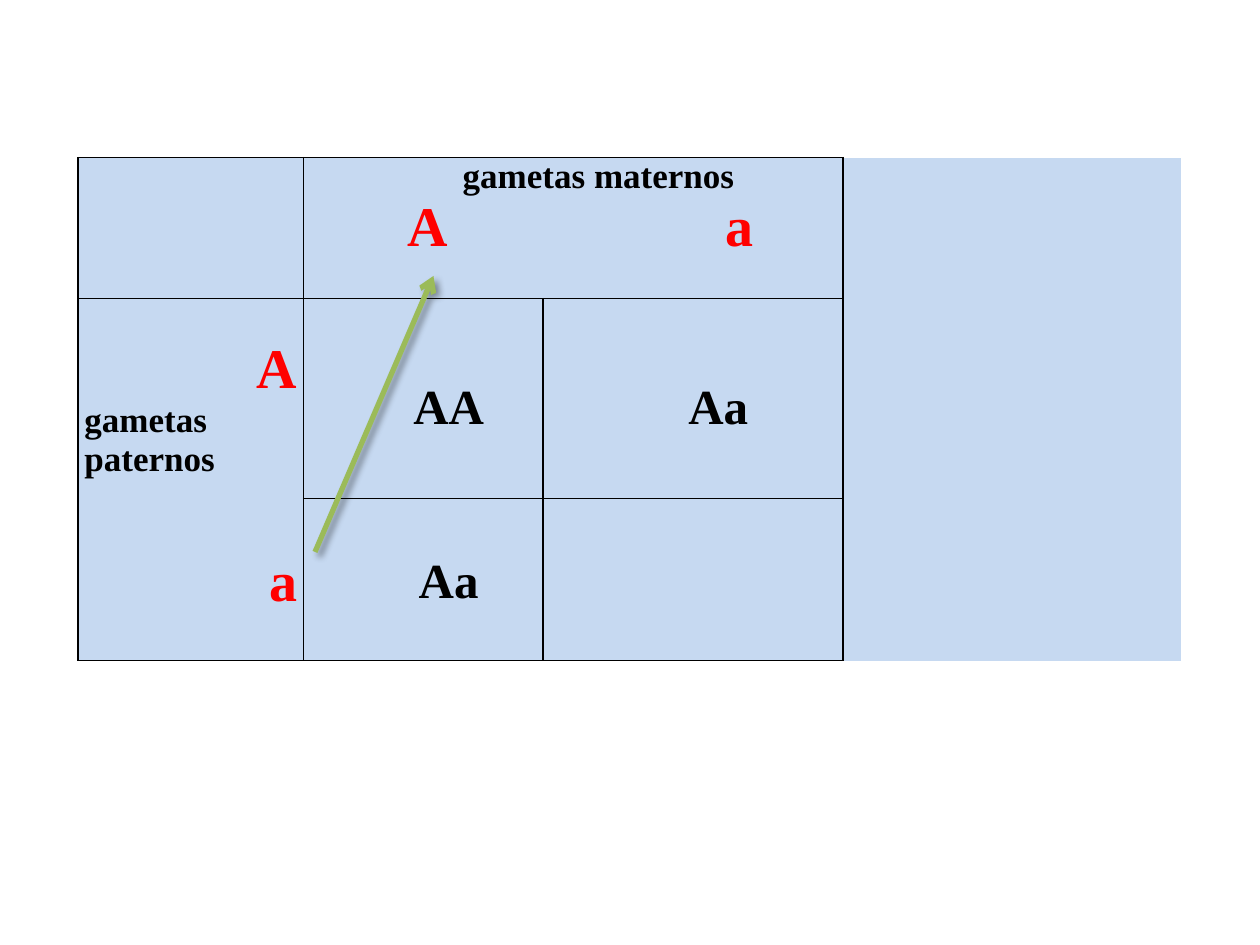
from lxml.etree import SubElement
from pptx import Presentation
from pptx.dml.color import RGBColor
from pptx.enum.shapes import MSO_CONNECTOR
from pptx.enum.text import PP_ALIGN
from pptx.oxml.ns import qn
from pptx.util import Pt

THEME = {
    "font": "Times New Roman",
    "ink": "000000", "allele": "FF0000", "cell": "C6D9F1", "arrow": "9BBB59",
    "label": 20, "genotype": 28, "gamete": 32,
    "border": 1, "arrow_width": 3,
}
LEFT, TOP = 44.64, 90
COLUMNS = [128.9, 136.8, 171.4, 193]
ROWS = [80.6, 114.3, 92.6]
MERGES = [((0, 1), (0, 2)), ((1, 0), (2, 0)), ((0, 3), (2, 3))]
ARROW = (180, 315.4, 247.7, 157.7)
INDENT = 28.8
GAMETE_TABS = [55.8, 237.6]

# (row, column): top margin and paragraphs of (text, size, colour, format)
CENTRED = {"alignment": PP_ALIGN.CENTER}
RIGHT = {"alignment": PP_ALIGN.RIGHT}
CONTENT = {
    (0, 1): (0, [("gametas maternos", "label", "ink", CENTRED),
                 ("\tA\ta", "gamete", "allele", {})]),
    (1, 0): (23, [("A", "gamete", "allele", RIGHT),
                  ("gametas paternos", "label", "ink", {"alignment": PP_ALIGN.LEFT}),
                  ("a", "gamete", "allele", {**RIGHT, "space_before": Pt(41.7)})]),
    (1, 1): (47, [("AA", "genotype", "ink", CENTRED)]),
    (1, 2): (47, [("Aa", "genotype", "ink", CENTRED)]),
    (2, 1): (32.2, [("Aa", "genotype", "ink", CENTRED)]),
}


def colour(name):
    return RGBColor.from_string(THEME[name])


def apply(target, values):
    for name, value in values.items():
        setattr(target, name, value)


def add_element(parent, tag, **attributes):
    element = SubElement(parent, qn(tag))
    for name, value in attributes.items():
        element.set(name, str(value))
    return element


def style_cell(cell, visible_sides):
    properties = cell._tc.get_or_add_tcPr()
    for side in "LRTB":
        line = add_element(properties, f"a:ln{side}", w=Pt(THEME["border"]))
        if side in visible_sides:
            fill = add_element(line, "a:solidFill")
            add_element(fill, "a:srgbClr", val=THEME["ink"])
        else:
            add_element(line, "a:noFill")
    cell.fill.solid()
    cell.fill.fore_color.rgb = colour("cell")


def write_cell(cell, top_margin, lines):
    apply(cell, {"margin_left": Pt(3.6), "margin_right": Pt(3.6),
                 "margin_top": Pt(top_margin), "margin_bottom": 0})
    frame = cell.text_frame
    for index, (text, size, ink, values) in enumerate(lines):
        para = frame.add_paragraph() if index else frame.paragraphs[0]
        apply(para, values)
        properties = para._p.get_or_add_pPr()
        if values is CENTRED:
            properties.set("indent", str(Pt(INDENT)))
        if "\t" in text:
            tabs = add_element(properties, "a:tabLst")
            for position in GAMETE_TABS:
                add_element(tabs, "a:tab", pos=Pt(position), algn="l")
        span = para.add_run()
        span.text = text
        apply(span.font, {"name": THEME["font"], "size": Pt(THEME[size]), "bold": True})
        span.font.color.rgb = colour(ink)


def add_punnett_table(page):
    frame = page.shapes.add_table(len(ROWS), len(COLUMNS), Pt(LEFT), Pt(TOP),
                                  Pt(sum(COLUMNS)), Pt(sum(ROWS)))
    table = frame.table
    apply(table, {"first_row": False, "horz_banding": False})
    for column, width in zip(table.columns, COLUMNS):
        column.width = Pt(width)
    for row, height in zip(table.rows, ROWS):
        row.height = Pt(height)
    for start, end in MERGES:
        table.cell(*start).merge(table.cell(*end))
    last = len(COLUMNS) - 1
    for row in range(len(ROWS)):
        for column in range(len(COLUMNS)):
            style_cell(table.cell(row, column), "L" if column == last else "LRTB")
    for place, (top_margin, lines) in CONTENT.items():
        write_cell(table.cell(*place), top_margin, lines)


def add_arrow(page):
    arrow = page.shapes.add_connector(MSO_CONNECTOR.STRAIGHT, *map(Pt, ARROW))
    arrow.line.color.rgb = colour("arrow")
    arrow.line.width = Pt(THEME["arrow_width"])
    add_element(arrow.line._get_or_add_ln(), "a:tailEnd", type="arrow")
    effects = add_element(arrow._element.spPr, "a:effectLst")
    shadow = add_element(effects, "a:outerShdw", blurRad=Pt(4), dist=Pt(3),
                         dir=45 * 60000, rotWithShape=0)
    add_element(add_element(shadow, "a:srgbClr", val=THEME["ink"]), "a:alpha", val=40000)


def main():
    deck = Presentation()
    apply(deck, {"slide_width": Pt(720), "slide_height": Pt(540)})
    page = deck.slides.add_slide(deck.slide_layouts.get_by_name("Blank"))
    add_punnett_table(page)
    add_arrow(page)
    deck.save("out.pptx")


if __name__ == "__main__":
    main()
